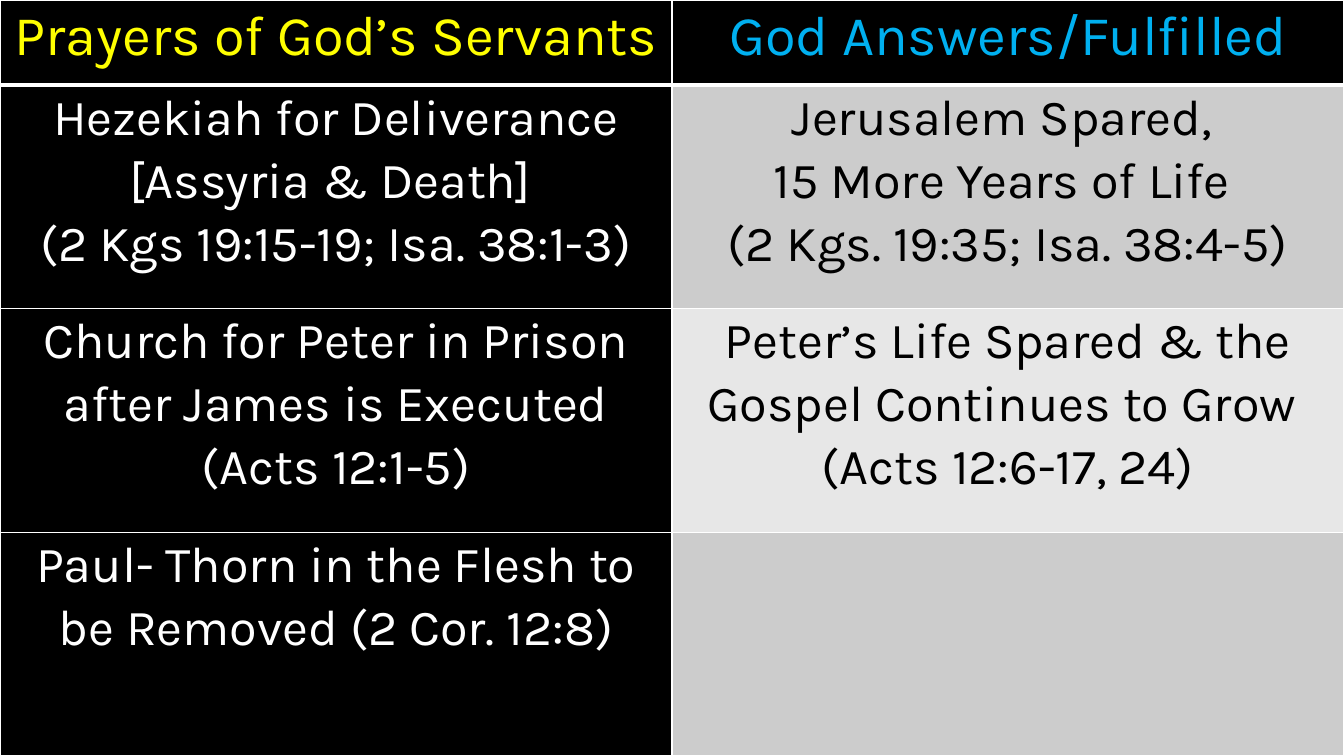
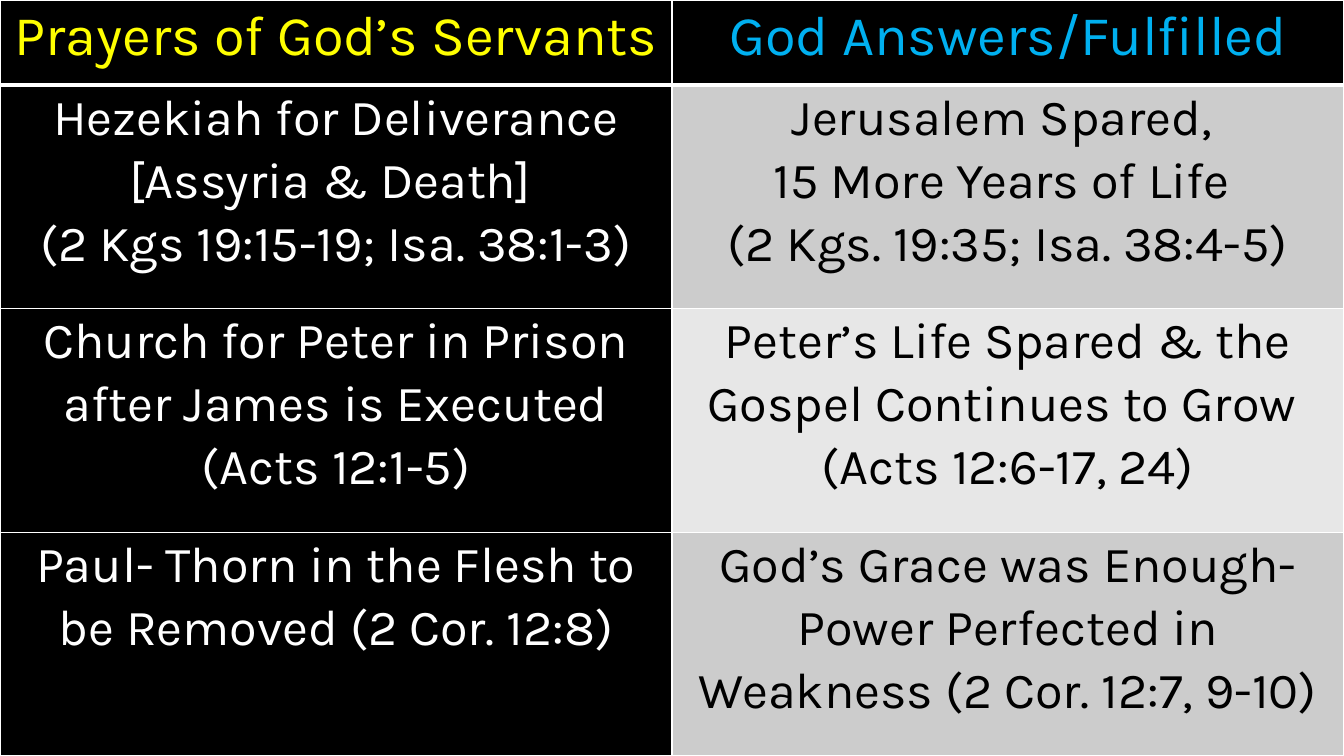
from lxml import etree
from pptx import Presentation
from pptx.dml.color import RGBColor
from pptx.enum.text import PP_ALIGN
from pptx.oxml.ns import qn
from pptx.util import Pt

CENTER = PP_ALIGN.CENTER

BLACK = RGBColor(0x00, 0x00, 0x00)
WHITE = RGBColor(0xFF, 0xFF, 0xFF)
YELLOW = RGBColor(0xFF, 0xFF, 0x00)
BLUE = RGBColor(0x00, 0xB0, 0xF0)
GRAY = RGBColor(0xCC, 0xCC, 0xCC)
LIGHT_GRAY = RGBColor(0xE7, 0xE7, 0xE7)

SLIDE_WIDTH, SLIDE_HEIGHT = 960, 540
HEADER_HEIGHT = 60.5
THIN, THICK = 1, 3

HEADINGS = (("Prayers of God’s Servants", YELLOW), ("God Answers/Fulfilled", BLUE))
PRAYERS = (
    ("Hezekiah for Deliverance [Assyria & Death] ", "(2 Kgs 19:15-19; Isa. 38:1-3)"),
    ("Church for Peter in Prison after James is Executed (Acts 12:1-5)",),
    ("Paul- Thorn in the Flesh to be Removed (2 Cor. 12:8)",),
)
ANSWERS = (
    ("Jerusalem Spared, ", "15 More Years of Life ", "(2 Kgs. 19:35; Isa. 38:4-5)"),
    ("Peter’s Life Spared & the Gospel Continues to Grow ", "(Acts 12:6-17, 24)"),
    ("God’s Grace was Enough- Power Perfected in Weakness (2 Cor. 12:7, 9-10)",),
)


def write_text(frame, lines, *, size=36, color=WHITE, font="Karla", align=CENTER, spacing=1.07):
    """Write each line as its own paragraph."""
    for number, line in enumerate(lines):
        paragraph = frame.paragraphs[0] if number == 0 else frame.add_paragraph()
        paragraph.alignment = align
        paragraph.line_spacing = spacing
        run = paragraph.add_run()
        run.text = line
        run.font.name = font
        run.font.size = Pt(size)
        run.font.color.rgb = color


def set_borders(cell, **widths):
    """Draw white cell borders; widths are given by side: L, R, T, B."""
    properties = cell._tc.get_or_add_tcPr()
    for side in "LRTB":
        width = Pt(widths.get(side, THIN))
        line = etree.SubElement(properties, qn(f"a:ln{side}"), w=str(width))
        fill = etree.SubElement(line, qn("a:solidFill"))
        etree.SubElement(fill, qn("a:srgbClr"), val=str(WHITE))


class PrayerDeck:
    def __init__(self):
        self.presentation = Presentation()
        self.presentation.slide_width = Pt(SLIDE_WIDTH)
        self.presentation.slide_height = Pt(SLIDE_HEIGHT)
        self.slide = None

    def add_slide(self):
        self.slide = self.presentation.slides.add_slide(self.presentation.slide_layouts[6])
        background = self.slide.background.fill
        background.solid()
        background.fore_color.rgb = BLACK

    def fill_cell(self, cell, lines, fill, borders, **text_format):
        cell.margin_left = cell.margin_right = Pt(5)
        cell.margin_top = cell.margin_bottom = Pt(0)
        set_borders(cell, **borders)
        cell.fill.solid()
        cell.fill.fore_color.rgb = fill
        write_text(cell.text_frame, lines, **text_format)

    def add_prayer_table(self, answers):
        """Pair every prayer with its answer; a missing answer stays blank."""
        row_count = len(PRAYERS) + 1
        table = self.slide.shapes.add_table(
            row_count, 2, Pt(0), Pt(0), Pt(SLIDE_WIDTH), Pt(SLIDE_HEIGHT)).table
        for column in table.columns:
            column.width = Pt(SLIDE_WIDTH / 2)
        for row in table.rows:
            row.height = Pt((SLIDE_HEIGHT - HEADER_HEIGHT) / len(PRAYERS))
        table.rows[0].height = Pt(HEADER_HEIGHT)

        for column, (heading, color) in enumerate(HEADINGS):
            self.fill_cell(table.cell(0, column), [heading], BLACK, {"B": THICK},
                           size=40, color=color)
        for row, prayer in enumerate(PRAYERS, start=1):
            answer = answers[row - 1] if row <= len(answers) else ()
            borders = {"T": THICK} if row == 1 else {}
            self.fill_cell(table.cell(row, 0), prayer, BLACK, borders)
            self.fill_cell(table.cell(row, 1), answer, GRAY if row % 2 else LIGHT_GRAY,
                           borders, color=BLACK)


def main():
    deck = PrayerDeck()
    for answers in (ANSWERS[:-1], ANSWERS):
        deck.add_slide()
        deck.add_prayer_table(answers)
    deck.presentation.save("out.pptx")


if __name__ == "__main__":
    main()
